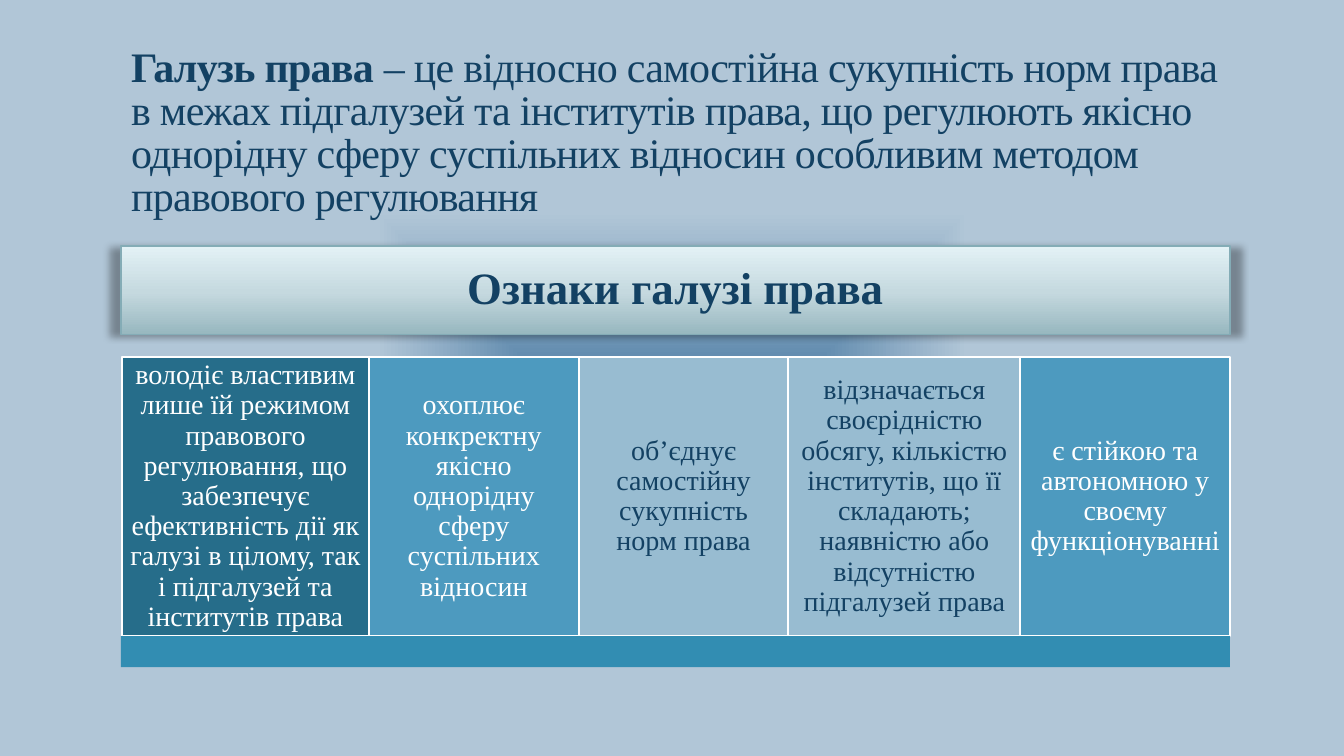
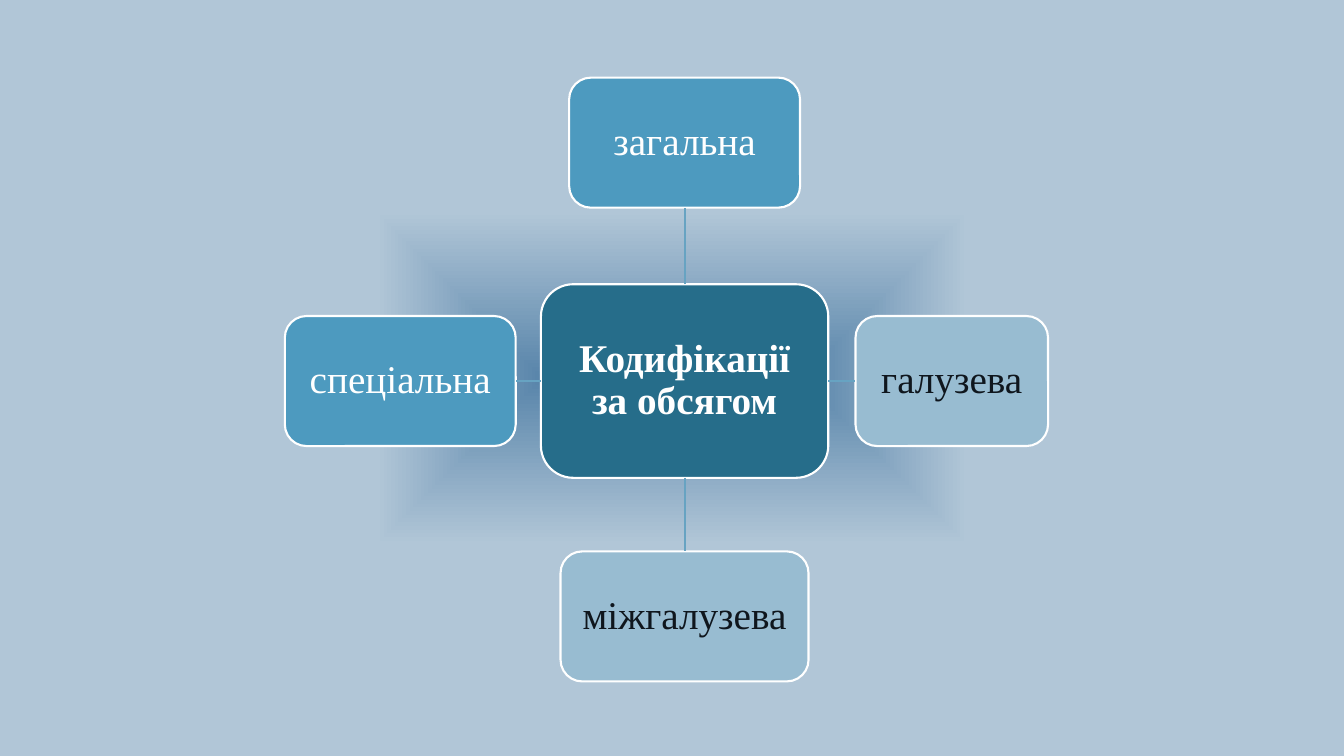
"""Build two slides on branches of law and kinds of codification."""
from dataclasses import dataclass

from pptx import Presentation
from pptx.dml.color import RGBColor as Rgb
from pptx.enum.shapes import MSO_CONNECTOR as Link, MSO_SHAPE as Kind
from pptx.enum.text import MSO_ANCHOR as Anchor, MSO_AUTO_SIZE as Auto, PP_ALIGN as Align
from pptx.oxml import parse_xml
from pptx.oxml.ns import nsdecls, qn
from pptx.util import Inches, Pt


@dataclass(frozen=True)
class Theme:
    font: str = "Times New Roman"
    navy: str = "134163"
    ink: str = "0F161D"
    white: str = "FFFFFF"
    deep: str = "266D8A"
    blue: str = "4D9ABF"
    pale: str = "98BCD1"
    base: str = "328DB2"
    link: str = "67A3C2"
    edge: str = "84ACB6"
    glow: tuple = ((0, "5884AA", 80), (44, "B1C6D7", 100), (100, "B1C6D7", 100))
    sheen: tuple = ((0, "97B7BF", 100), (48, "C5D9DF", 100), (100, "E3F2F6", 100))
    title: int = 30
    band: int = 32
    node: int = 28
    card: int = 20
    rule: float = 1.5


T = Theme()
TITLE = [
    ("Галузь права ", True),
    ("– це відносно самостійна сукупність норм права в межах підгалузей та "
     "інститутів права, що регулюють якісно однорідну сферу суспільних відносин "
     "особливим методом правового регулювання", False),
]
BAND = "Ознаки галузі права"
CARDS = [
    ("володіє властивим лише їй режимом правового регулювання, що забезпечує "
     "ефективність дії як галузі в цілому, так і підгалузей та інститутів права",
     2.45, T.deep, T.white),
    ("охоплює конкректну якісно однорідну сферу суспільних відносин",
     2.08, T.blue, T.white),
    ("об’єднує самостійну сукупність норм права", 2.08, T.pale, T.navy),
    ("відзначається своєрідністю обсягу, кількістю інститутів, що її складають; "
     "наявністю або відсутністю підгалузей права", 2.3, T.pale, T.navy),
    ("є стійкою та автономною у своєму функціонуванні", 2.08, T.blue, T.white),
]
HUB = "Кодифікації за обсягом"
NODES = [
    ("загальна", 0, 2.29, 0.76, T.blue, T.white),
    ("галузева", 3, 1.91, 0.27, T.pale, T.ink),
    ("міжгалузева", 2, 2.46, 0.73, T.pale, T.ink),
    ("спеціальна", 1, 2.29, 0.25, T.blue, T.white),
]
STEP = {0: (0, -1), 1: (-1, 0), 2: (0, 1), 3: (1, 0)}
LEFT, WIDE = 1.2, 11
MID_X, MID_Y = 6.79, 3.78
HUB_W, HUB_H, NODE_H = 2.85, 1.92, 1.29


def style(part, look):
    for name, value in look.items():
        setattr(part, name, value)


def blend(fill, root, stops, way):
    fill.gradient()
    old = root.find(".//" + qn("a:gradFill"))
    marks = "".join(
        f'<a:gs pos="{pos * 1000}"><a:srgbClr val="{tint}">'
        f'<a:alpha val="{solid * 1000}"/></a:srgbClr></a:gs>'
        for pos, tint, solid in stops)
    new = parse_xml(f'<a:gradFill {nsdecls("a")} rotWithShape="1">'
                    f'<a:gsLst>{marks}</a:gsLst>{way}</a:gradFill>')
    old.getparent().replace(old, new)


def write(para, text, size, tint, bold=False):
    run = para.add_run()
    run.text = text
    style(run.font, {"name": T.font, "size": Pt(size), "bold": bold})
    run.font.color.rgb = Rgb.from_string(tint)
    return run


def box(slide, kind, area, fill=None, line=T.white, rule=T.rule):
    shape = slide.shapes.add_shape(kind, *map(Inches, area))
    shape.shadow.inherit = False
    if fill:
        shape.fill.solid()
        shape.fill.fore_color.rgb = Rgb.from_string(fill)
    if line:
        shape.line.color.rgb = Rgb.from_string(line)
        shape.line.width = Pt(rule)
    else:
        shape.line.fill.background()
    return shape


def label(shape, text, size, tint, bold=False, pad=0.08):
    frame = shape.text_frame
    sides = ("left", "top", "right", "bottom")
    style(frame, {"word_wrap": True, "vertical_anchor": Anchor.MIDDLE,
                  **{f"margin_{side}": Inches(pad) for side in sides}})
    para = frame.paragraphs[0]
    style(para, {"alignment": Align.CENTER, "line_spacing": 0.9})
    write(para, text, size, tint, bold)


def join(slide, hub, node, side):
    line = slide.shapes.add_connector(Link.STRAIGHT, 0, 0, 0, 0)
    line.begin_connect(hub, side)
    line.end_connect(node, (side + 2) % 4)
    line.line.color.rgb = Rgb.from_string(T.link)
    line.line.width = Pt(T.rule)
    line._element.spPr.append(parse_xml(f'<a:effectLst {nsdecls("a")}/>'))


def head(slide):
    title = slide.shapes.title
    spot = zip(("left", "top", "width", "height"), (LEFT, 0.31, WIDE, 1.92))
    style(title, {name: Inches(value) for name, value in spot})
    frame = title.text_frame
    style(frame, {"word_wrap": True, "auto_size": Auto.NONE,
                  "vertical_anchor": Anchor.BOTTOM})
    para = frame.paragraphs[0]
    style(para, {"alignment": Align.LEFT, "line_spacing": 0.85})
    for text, bold in TITLE:
        run = write(para, text, T.title, T.navy, bold)
        run._r.get_or_add_rPr().set("spc", "-50")


def branch(slide):
    head(slide)
    band = box(slide, Kind.RECTANGLE, (LEFT, 2.44, WIDE, 0.88), line=T.edge, rule=1)
    blend(band.fill, band._element.spPr, T.sheen, '<a:lin ang="16200000" scaled="0"/>')
    band._element.spPr.find(qn("a:effectLst")).append(parse_xml(
        f'<a:outerShdw {nsdecls("a")} blurRad="{Pt(5)}" dist="{Pt(1)}" dir="5400000" '
        'sx="102000" algn="ctr" rotWithShape="0"><a:srgbClr val="000000">'
        '<a:alpha val="32000"/></a:srgbClr></a:outerShdw>'))
    label(band, BAND, T.band, T.navy, True, 0.13)
    left = LEFT + 0.01
    for text, wide, fill, tint in CARDS:
        card = box(slide, Kind.RECTANGLE, (left, 3.54, wide, 2.77), fill)
        label(card, text, T.card, tint)
        left += wide
    box(slide, Kind.RECTANGLE, (LEFT, 6.31, WIDE, 0.31), T.base, None)


def around(slide, mid_x, mid_y, wide, high, fill):
    area = (mid_x - wide / 2, mid_y - high / 2, wide, high)
    return box(slide, Kind.ROUNDED_RECTANGLE, area, fill)


def codes(slide):
    hub = around(slide, MID_X, MID_Y, HUB_W, HUB_H, T.deep)
    label(hub, HUB, T.node, T.white, True)
    for text, side, wide, gap, fill, tint in NODES:
        dx, dy = STEP[side]
        mid_x = MID_X + dx * ((HUB_W + wide) / 2 + gap)
        mid_y = MID_Y + dy * ((HUB_H + NODE_H) / 2 + gap)
        node = around(slide, mid_x, mid_y, wide, NODE_H, fill)
        label(node, text, T.node, tint)
        join(slide, hub, node, side)


def main():
    deck = Presentation()
    style(deck, {"slide_width": Inches(13.33), "slide_height": Inches(7.5)})
    master = deck.slide_master
    blend(master.background.fill, master._element, T.glow,
          '<a:path path="shape"><a:fillToRect l="50000" t="50000" r="50000" b="50000"/>'
          '</a:path>')
    for layout, draw in ((5, branch), (6, codes)):
        draw(deck.slides.add_slide(deck.slide_layouts[layout]))
    deck.save("out.pptx")


if __name__ == "__main__":
    main()
